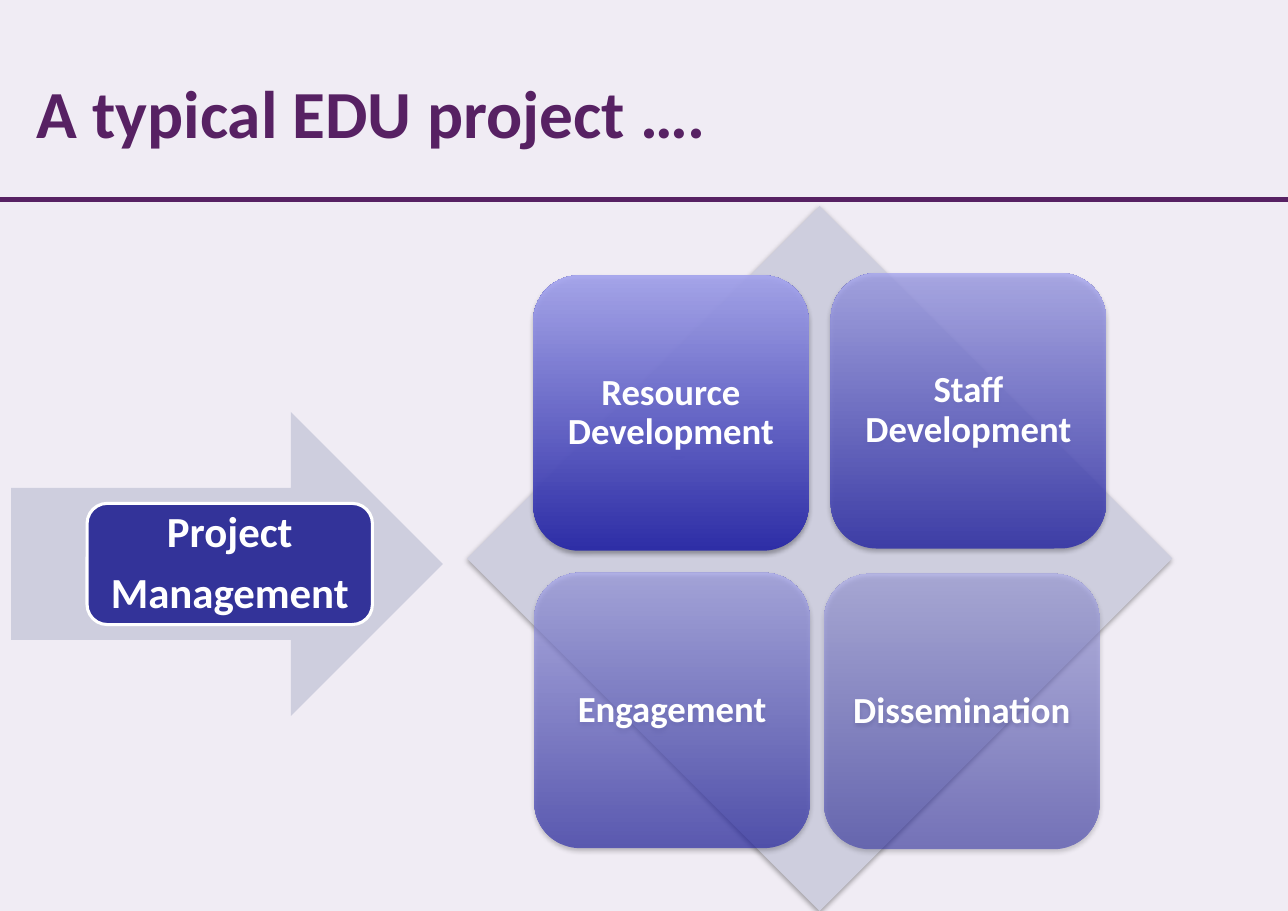
"""Build a slide showing project management feeding four strands of an EDU project."""
from lxml.etree import SubElement
from pptx import Presentation
from pptx.dml.color import RGBColor
from pptx.enum.shapes import MSO_CONNECTOR, MSO_SHAPE
from pptx.enum.text import MSO_ANCHOR, PP_ALIGN
from pptx.oxml import parse_xml
from pptx.oxml.ns import nsdecls, qn
from pptx.util import Inches, Pt

BACKGROUND = RGBColor(0xF0, 0xEC, 0xF4)
PURPLE = RGBColor(0x57, 0x21, 0x63)
PALE = RGBColor(0xCE, 0xCE, 0xDE)
NAVY = RGBColor(0x33, 0x33, 0x99)
DARK_BLUE = RGBColor(0x24, 0x24, 0xA8)
LIGHT_BLUE = RGBColor(0xA4, 0xA4, 0xEF)
WHITE = RGBColor(0xFF, 0xFF, 0xFF)

SHADOW = f"""<a:effectLst {nsdecls('a')}>
  <a:outerShdw blurRad="39370" dist="22860" dir="5400000" rotWithShape="0">
    <a:srgbClr val="000000"><a:alpha val="35000"/></a:srgbClr>
  </a:outerShdw>
</a:effectLst>"""


def add_block(group, preset, left, top, width, height, color=None, shadowed=False):
    shape = group.shapes.add_shape(
        preset, Inches(left), Inches(top), Inches(width), Inches(height))
    shape.shadow.inherit = False
    shape.line.fill.background()
    if color is not None:
        shape.fill.solid()
        shape.fill.fore_color.rgb = color
    if shadowed:
        properties = shape._element.spPr
        properties.replace(properties.find(qn("a:effectLst")), parse_xml(SHADOW))
    return shape


def write_label(shape, lines, size, margin):
    frame = shape.text_frame
    frame.word_wrap = True
    frame.vertical_anchor = MSO_ANCHOR.MIDDLE
    frame.margin_left = frame.margin_right = Inches(margin)
    frame.margin_top = frame.margin_bottom = Inches(margin)
    frame.text = "\n".join(lines)
    for paragraph in frame.paragraphs:
        paragraph.alignment = PP_ALIGN.CENTER
        paragraph.line_spacing = 0.9
        paragraph.space_after = Pt(size * 0.35)
        paragraph.font.name = "Calibri"
        paragraph.font.size = Pt(size)
        paragraph.font.bold = True
        paragraph.font.color.rgb = WHITE


presentation = Presentation()
presentation.slide_width = Inches(11.69)
presentation.slide_height = Inches(8.27)
slide = presentation.slides.add_slide(presentation.slide_layouts[5])
slide.background.fill.solid()
slide.background.fill.fore_color.rgb = BACKGROUND

rule = slide.shapes.add_connector(
    MSO_CONNECTOR.STRAIGHT, 0, Inches(1.81), Inches(11.69), Inches(1.81))
rule.line.color.rgb = PURPLE
rule.line.width = Pt(3.5)
SubElement(rule._element.spPr, qn("a:effectLst"))

title = slide.shapes.title
title.left, title.top = Inches(0.23), Inches(0.49)
title.width, title.height = Inches(9.88), Inches(1.04)
title.text_frame.text = "A typical EDU project …."
title.text_frame.vertical_anchor = MSO_ANCHOR.MIDDLE
heading = title.text_frame.paragraphs[0]
heading.alignment = PP_ALIGN.LEFT
heading.font.name = "Calibri"
heading.font.size = Pt(44)
heading.font.bold = True
heading.font.color.rgb = PURPLE

matrix = slide.shapes.add_group_shape()
add_block(matrix, MSO_SHAPE.DIAMOND, 4.24, 1.87, 6.4, 6.4, PALE, shadowed=True)

strands = [
    ("Resource Development", 4.84, 2.5, 90),
    ("Staff Development", 7.54, 2.48, 77),
    ("Engagement", 4.85, 5.2, 63),
    ("Dissemination", 7.48, 5.21, 50),
]
for label, left, top, opacity in strands:
    tile = add_block(matrix, MSO_SHAPE.ROUNDED_RECTANGLE, left, top, 2.5, 2.5, shadowed=True)
    tile.fill.gradient()
    tile.fill.gradient_angle = 90
    for stop, color in zip(tile.fill.gradient_stops, (DARK_BLUE, LIGHT_BLUE)):
        stop.color.rgb = color
    for color_element in tile._element.spPr.find(qn("a:gradFill")).iter(qn("a:srgbClr")):
        SubElement(color_element, qn("a:alpha")).set("val", str(opacity * 1000))
    write_label(tile, [label], 24, 0.1)

management = slide.shapes.add_group_shape()
add_block(management, MSO_SHAPE.RIGHT_ARROW, 0.1, 3.74, 3.92, 2.76, PALE)
box = add_block(management, MSO_SHAPE.ROUNDED_RECTANGLE, 0.79, 4.57, 2.59, 1.1, NAVY)
box.line.color.rgb = WHITE
box.line.width = Pt(2)
write_label(box, ["Project", "Management"], 28, 0.12)

presentation.save("out.pptx")
